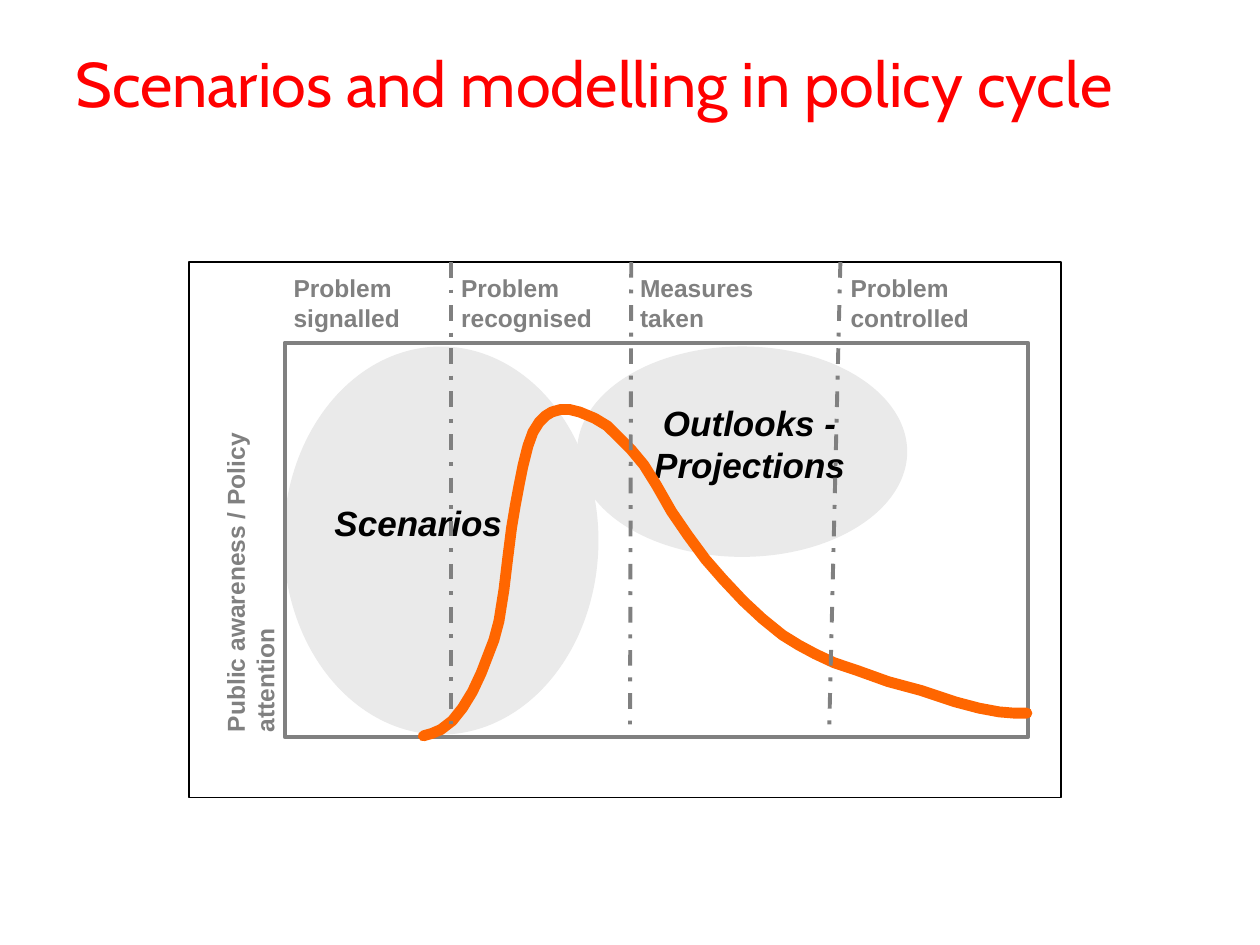
"""Build the slide on scenarios and modelling in the policy cycle."""
import pptx
import pptx.dml.color
import pptx.enum.dml
import pptx.enum.shapes
import pptx.enum.text
import pptx.oxml
import pptx.util

deck = pptx.Presentation()
deck.slide_width, deck.slide_height = pptx.util.Inches(10), pptx.util.Inches(7.5)
slide = deck.slides.add_slide(deck.slide_layouts[6])
shapes = slide.shapes
unit = deck.slide_width / 10
GREY, ORANGE, BLACK = "808080", "FF6600", "000000"
LABEL = {"name": "Arial", "size": pptx.util.Pt(14), "bold": True}
PHASE = {"name": "Arial", "size": pptx.util.Pt(20), "bold": True, "italic": True}
HEADING = {"name": "Cabin", "size": pptx.util.Pt(36)}


def paint(colour_format, colour):
    colour_format.rgb = pptx.dml.color.RGBColor.from_string(colour)


def write(lines, place, font, colour, margins, align="LEFT", wrap=True):
    box = shapes.add_textbox(*(round(v * unit) for v in place))
    frame = box.text_frame
    frame.word_wrap = wrap
    for side, inset in zip(("left", "top", "right", "bottom"), margins):
        setattr(frame, f"margin_{side}", round(inset * unit))
    for number, line in enumerate(lines):
        paragraph = frame.paragraphs[0] if number == 0 else frame.add_paragraph()
        paragraph.alignment = getattr(pptx.enum.text.PP_ALIGN, align)
        run = paragraph.add_run()
        run.text = line
        for key, value in font.items():
            setattr(run.font, key, value)
        paint(run.font.color, colour)
    return box


PADDING = (0.1, 0.05, 0.1, 0.05)
write(["Scenarios and modelling in policy cycle"], (0.5, 0.3, 9, 1.25), HEADING, "FF0000", PADDING)

areas = [
    ("OVAL", (4.58, 2.75, 2.62, 1.67), "EAEAEA", None, 0),
    ("OVAL", (2.25, 2.75, 2.5, 3.08), "EAEAEA", None, 0),
    ("RECTANGLE", (2.26, 2.72, 5.9, 3.13), None, GREY, 2.25),
    ("RECTANGLE", (1.5, 2.08, 6.92, 4.25), None, BLACK, 0.75),
]
for kind, place, fill, outline, weight in areas:
    area = shapes.add_shape(
        getattr(pptx.enum.shapes.MSO_SHAPE, kind), *(round(v * unit) for v in place))
    area.shadow.inherit = False
    if fill:
        area.fill.solid()
        paint(area.fill.fore_color, fill)
        area.line.fill.background()
    else:
        area.fill.background()
        paint(area.line.color, outline)
        area.line.width = pptx.util.Pt(weight)

write(["Outlooks - Projections"], (4.91, 3.14, 2.08, 0.77), PHASE, BLACK, PADDING, "CENTER")
write(["Scenarios"], (2.36, 3.93, 1.92, 0.43), PHASE, BLACK, PADDING, "CENTER", False)

attention = [
    (336, 584), (343, 582), (350, 579), (359, 572), (367, 562), (375, 549), (382, 534),
    (387, 521), (392, 508), (396, 493), (400, 468), (403, 443), (406, 419), (409, 401),
    (412, 385), (415, 370), (419, 354), (423, 343), (428, 335), (433, 330), (438, 327),
    (445, 325), (452, 325), (460, 327), (472, 332), (482, 338), (491, 347), (501, 357),
    (511, 369), (521, 385), (533, 406), (546, 425), (560, 444), (574, 460), (590, 477),
    (605, 491), (621, 504), (634, 512), (647, 519), (662, 526), (680, 532), (705, 541),
    (731, 548), (758, 557), (777, 562), (793, 565), (805, 566), (815, 566),
]
builder = shapes.build_freeform(*attention[0], scale=unit / 100)
builder.add_line_segments(attention[1:], close=False)
curve = builder.convert_to_shape()
curve.shadow.inherit = False
curve.fill.background()
paint(curve.line.color, ORANGE)
curve.line.width = pptx.util.Pt(6.2)
curve.line._get_or_add_ln().set("cap", "rnd")

stages = [
    (2.25, 1.12, "Problem", "signalled"),
    (3.58, 1.16, "Problem", "recognised"),
    (5, 1.03, "Measures", "taken"),
    (6.67, 1.05, "Problem", "controlled"),
]
for left, width, *words in stages:
    write(words, (left, 2.17, width, 0.47), LABEL, GREY, (0.08, 0, 0, 0))

axis = write(["Public awareness / Policy attention"], (0.25, 4.08, 3.23, 0.23), LABEL, GREY, (0,) * 4)
axis.rotation = 270

for top, bottom in [(3.58, 3.58), (5.01, 5), (6.67, 6.58)]:
    divider = shapes.add_connector(
        pptx.enum.shapes.MSO_CONNECTOR.STRAIGHT,
        *(round(v * unit) for v in (top, 2.08, bottom, 5.83)))
    paint(divider.line.color, GREY)
    divider.line.width = pptx.util.Pt(2.25)
    divider.line.dash_style = pptx.enum.dml.MSO_LINE.DASH_DOT
    divider._element.spPr.append(pptx.oxml.parse_xml(
        '<a:effectLst xmlns:a="http://schemas.openxmlformats.org/drawingml/2006/main"/>'))

deck.save("out.pptx")
